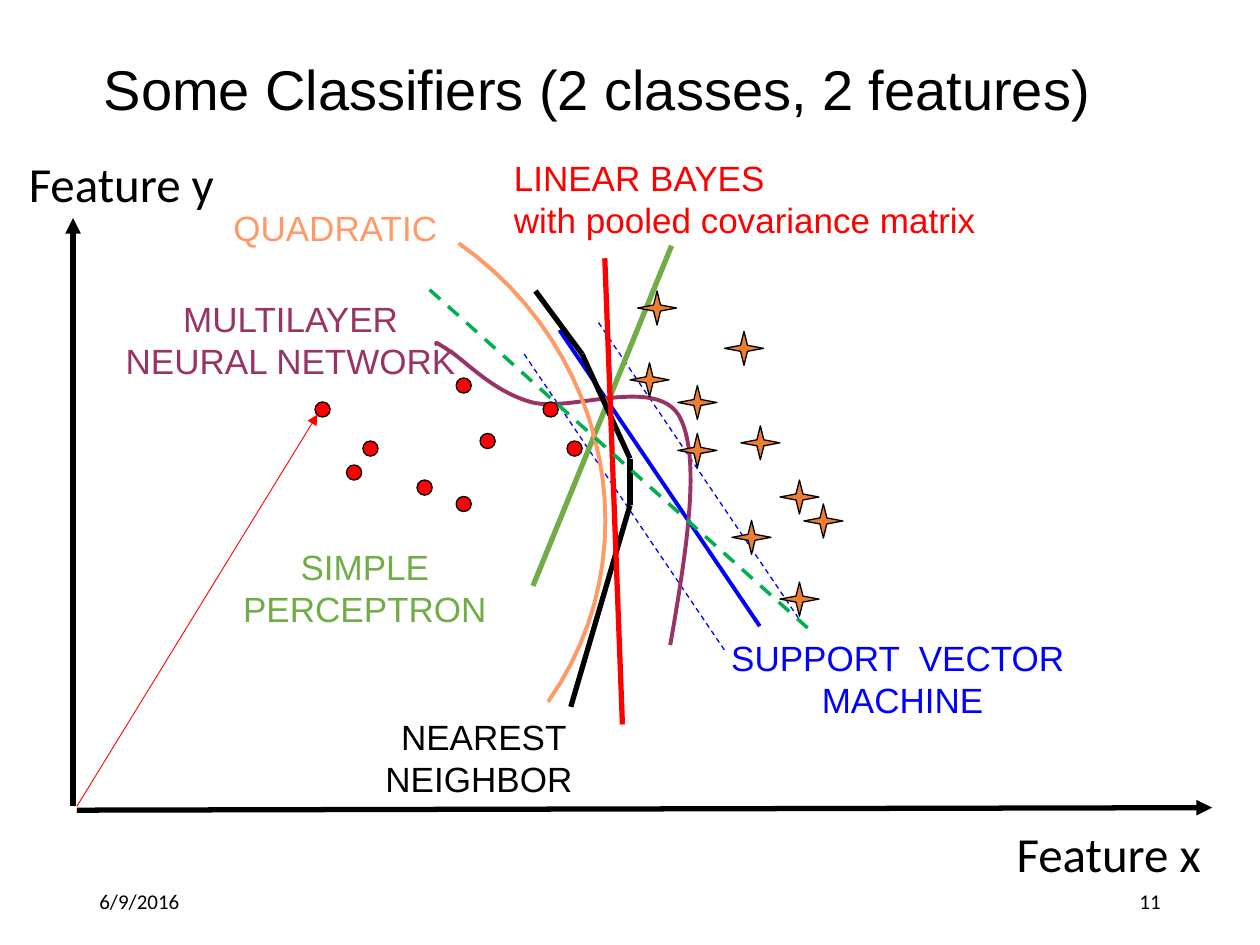
import pptx
import pptx.util
import pptx.dml.color
import pptx.enum.dml
import pptx.enum.shapes
import pptx.enum.text
import pptx.oxml.ns
import lxml.etree

Inches = pptx.util.Inches
Align = pptx.enum.text.PP_ALIGN
Anchor = pptx.enum.text.MSO_ANCHOR
Shape = pptx.enum.shapes.MSO_SHAPE

BLACK, RED, BLUE, GREEN = "000000", "FF0000", "0000FF", "70AD47"
PURPLE, PEACH, ORANGE, EMERALD = "993366", "FF9966", "ED7D31", "00B050"
ALIGNMENTS = {"left": Align.LEFT, "center": Align.CENTER, "right": Align.RIGHT}

TITLE = ["Some Classifiers (2 classes, 2 features) "]
CLASSIFIER_LABELS = [
    ((1.51, 1.59, 2.38, 0.44), ["QUADRATIC "], PEACH, "center", True),
    ((0.8, 2.31, 3.09, 0.77), ["MULTILAYER ", "NEURAL NETWORK "], PURPLE, "center", True),
    ((2.95, 5.63, 1.78, 0.77), ["NEAREST", "NEIGHBOR "], BLACK, "center", False),
    ((5.63, 5, 2.99, 0.77), ["SUPPORT  VECTOR", " MACHINE"], BLUE, "center", True),
    ((1.82, 4.28, 2.23, 0.77), ["SIMPLE ", "PERCEPTRON "], GREEN, "center", False),
]
BAYES_LABEL = ["LINEAR BAYES", "with pooled covariance matrix"]
AXIS_LABELS = [
    ((7.97, 6.49, 1.68, 0.57), "Feature x"),
    ((0.13, 1.17, 1.68, 0.57), "Feature y"),
]
FOOTERS = [
    ((0.69, 6.95, 2.25, 0.4), "6/9/2016", "left"),
    ((7.06, 6.95, 2.25, 0.4), "11", "right"),
]

MARGIN_LINES = [
    ((4.16, 2.81), (5.75, 5.16), BLUE, 0.75, True),
    ((4.44, 2.62), (6.03, 4.97), BLUE, 2.25, False),
    ((4.75, 2.56), (6.34, 4.91), BLUE, 0.75, True),
    ((5.33, 1.95), (4.23, 4.65), GREEN, 3, False),
]
NEIGHBOR_POINTS = [(4.25, 2.31), (4.62, 2.81), (5, 3.64), (5, 4.01), (4.53, 5.61)]
BAYES_LINE = ((4.8, 2.05), (4.94, 5.75), RED, 3)
DASHED_LINE = ((3.41, 2.3), (6.45, 5.02), EMERALD, 2, True)
ARROWS = [
    ((0.58, 6.4), (0.58, 1.73), BLACK, 3),
    ((0.61, 6.43), (9.62, 6.41), BLACK, 3),
    ((0.61, 6.4), (2.52, 3.29), RED, 0.5),
]
NEURAL_CURVE = [
    (5.32, 5.12), (5.45, 4.37), (5.57, 3.62), (5.39, 3.3), (5.2, 2.98),
    (4.51, 3.28), (4.21, 3.19), (3.9, 3.1), (3.68, 2.85), (3.56, 2.78),
    (3.44, 2.7), (3.46, 2.72), (3.47, 2.74),
]
QUADRATIC_CURVE = [(3.64, 1.93), (4.85, 2.78), (5.17, 4.41), (4.35, 5.57)]

DOT_SIZE = (0.12, 0.12)
DOTS = [(3.62, 3), (4.31, 3.19), (2.75, 3.69), (3.31, 3.81), (3.62, 3.94),
        (4.5, 3.5), (2.5, 3.19), (2.88, 3.5), (3.81, 3.44)]
STAR_SIZE = (0.31, 0.27)
STARS = [(5.38, 3.44), (5.38, 3.06), (5, 2.88), (5.75, 2.63), (5.81, 4.13),
         (5.06, 2.31), (5.88, 3.38), (6.19, 4.62), (6.19, 3.81), (6.38, 4)]


def rgb(value):
    return pptx.dml.color.RGBColor.from_string(value)


def inches(values):
    return [Inches(value) for value in values]


def set_line(shape, color, width):
    shape.line.color.rgb = rgb(color)
    shape.line.width = pptx.util.Pt(width)


def add_text(slide, box, paragraphs, size, font, color, align="left",
             wrap=True, footer=False):
    frame = slide.shapes.add_textbox(*inches(box)).text_frame
    frame.word_wrap = wrap
    if footer:
        frame.vertical_anchor = Anchor.MIDDLE
    else:
        frame.auto_size = pptx.enum.text.MSO_AUTO_SIZE.SHAPE_TO_FIT_TEXT
    for index, lines in enumerate(paragraphs):
        paragraph = frame.add_paragraph() if index else frame.paragraphs[0]
        paragraph.alignment = ALIGNMENTS[align]
        for number, text in enumerate(lines):
            if number:
                paragraph.add_line_break()
            run = paragraph.add_run()
            run.text = text
            run.font.size = pptx.util.Pt(size)
            run.font.name = font
            run.font.color.rgb = rgb(color)


def add_line(slide, start, end, color, width, dashed=False, arrow=False):
    line = slide.shapes.add_connector(
        pptx.enum.shapes.MSO_CONNECTOR.STRAIGHT, *inches(start + end))
    set_line(line, color, width)
    if dashed:
        line.line.dash_style = pptx.enum.dml.MSO_LINE.DASH
    properties = line.element.spPr
    if arrow:
        outline = properties.find(pptx.oxml.ns.qn("a:ln"))
        lxml.etree.SubElement(outline, pptx.oxml.ns.qn("a:tailEnd"), type="triangle")
    lxml.etree.SubElement(properties, pptx.oxml.ns.qn("a:effectLst"))


def bezier_point(controls, t):
    weights = ((1 - t) ** 3, 3 * t * (1 - t) ** 2, 3 * t * t * (1 - t), t ** 3)
    return tuple(sum(weight * value for weight, value in zip(weights, axis))
                 for axis in zip(*controls))


def add_curve(slide, controls, color, width, steps=24):
    points = [bezier_point(controls[first:first + 4], step / steps)
              for first in range(0, len(controls) - 1, 3)
              for step in range(1, steps + 1)]
    builder = slide.shapes.build_freeform(*inches(controls[0]))
    builder.add_line_segments([inches(point) for point in points], close=False)
    curve = builder.convert_to_shape()
    curve.shadow.inherit = False
    curve.fill.background()
    set_line(curve, color, width)


def add_markers(slide, kind, positions, size, color):
    for position in positions:
        marker = slide.shapes.add_shape(kind, *inches(position + size))
        marker.shadow.inherit = False
        marker.fill.solid()
        marker.fill.fore_color.rgb = rgb(color)
        set_line(marker, BLACK, 0.75)
        if kind == Shape.STAR_4_POINT:
            marker.adjustments[0] = 0.125


def main():
    presentation = pptx.Presentation()
    presentation.slide_width, presentation.slide_height = inches((10, 7.5))
    slide = presentation.slides.add_slide(presentation.slide_layouts[6])

    add_text(slide, (0.38 + 0.34, 0.38, 8.17, 0.64), [TITLE], 32, "Arial", BLACK,
             "center", wrap=False)
    for line in MARGIN_LINES:
        add_line(slide, *line)
    add_curve(slide, NEURAL_CURVE, PURPLE, 2.25)
    for start, end in zip(NEIGHBOR_POINTS, NEIGHBOR_POINTS[1:]):
        add_line(slide, start, end, BLACK, 3)
    add_text(slide, (3.98, 1.19, 4.01, 0.77), [[text] for text in BAYES_LABEL],
             20, "Arial", RED)
    for box, lines, color, align, wrap in CLASSIFIER_LABELS:
        add_text(slide, box, [lines], 20, "Arial", color, align, wrap)
    add_markers(slide, Shape.OVAL, DOTS, DOT_SIZE, RED)
    add_markers(slide, Shape.STAR_4_POINT, STARS, STAR_SIZE, ORANGE)
    add_line(slide, *BAYES_LINE)
    add_curve(slide, QUADRATIC_CURVE, PEACH, 2.25)
    add_line(slide, *DASHED_LINE)
    for arrow in ARROWS:
        add_line(slide, *arrow, arrow=True)
    for box, text in AXIS_LABELS:
        add_text(slide, box, [[text]], 28, "Calibri", BLACK, wrap=False)
    for box, text, align in FOOTERS:
        add_text(slide, box, [[text]], 12, "Calibri", BLACK, align, footer=True)

    presentation.save("out.pptx")


if __name__ == "__main__":
    main()
